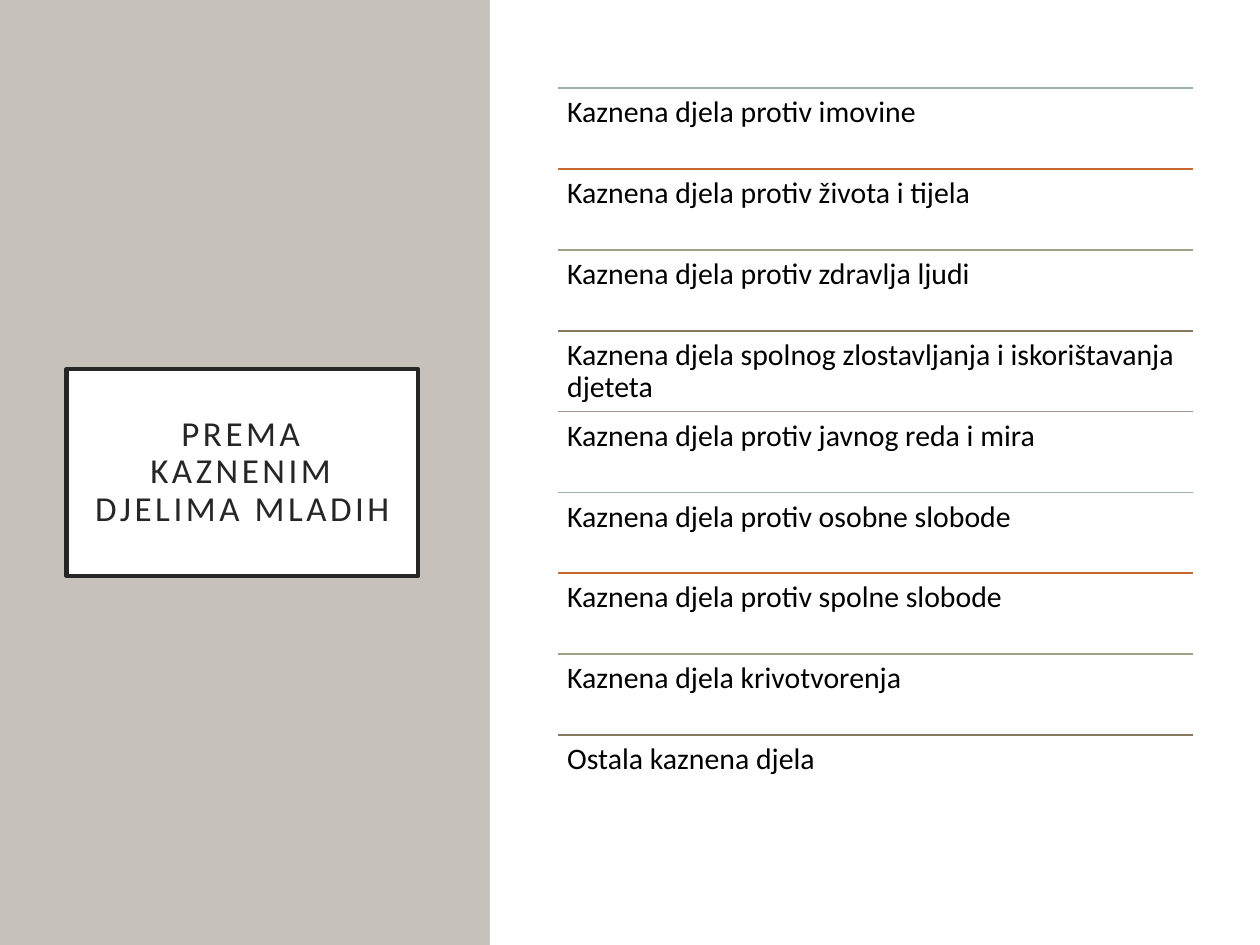
from itertools import cycle

from lxml import etree
from pptx import Presentation
from pptx.dml.color import RGBColor
from pptx.enum.shapes import MSO_CONNECTOR, MSO_SHAPE
from pptx.enum.text import MSO_ANCHOR, PP_ALIGN
from pptx.oxml.ns import qn
from pptx.util import Pt

RECTANGLE = MSO_SHAPE.RECTANGLE
STRAIGHT = MSO_CONNECTOR.STRAIGHT
TOP, MIDDLE = MSO_ANCHOR.TOP, MSO_ANCHOR.MIDDLE
LEFT, CENTER = PP_ALIGN.LEFT, PP_ALIGN.CENTER

WHITE = RGBColor(0xFF, 0xFF, 0xFF)
BLACK = RGBColor(0x00, 0x00, 0x00)
CHARCOAL = RGBColor(0x26, 0x26, 0x26)
STONE = RGBColor(0xC6, 0xC1, 0xBA)
RULE_COLORS = (
    RGBColor(0x9B, 0xAF, 0xB5),
    RGBColor(0xC9, 0x67, 0x31),
    RGBColor(0x9C, 0xA3, 0x83),
    RGBColor(0x87, 0x79, 0x5D),
    RGBColor(0xA0, 0x98, 0x8C),
)

TITLE = "PREMA KAZNENIM DJELIMA MLADIH"
OFFENCES = (
    "Kaznena djela protiv imovine",
    "Kaznena djela protiv života i tijela",
    "Kaznena djela protiv zdravlja ljudi",
    "Kaznena djela spolnog zlostavljanja i iskorištavanja djeteta",
    "Kaznena djela protiv javnog reda i mira",
    "Kaznena djela protiv osobne slobode",
    "Kaznena djela protiv spolne slobode",
    "Kaznena djela krivotvorenja",
    "Ostala kaznena djela",
)

SLIDE_WIDTH, SLIDE_HEIGHT = 720, 540
SIDEBAR_WIDTH = 280
LIST_LEFT, LIST_TOP, LIST_WIDTH = 319, 50.4, 363
ROW_HEIGHT = 46.2


class SlideBuilder:
    font_name = "Calibri"
    line_spacing = 0.9

    def __init__(self, slide):
        self.slide = slide

    def panel(self, left, top, width, height, fill, outline=None):
        shape = self.slide.shapes.add_shape(
            RECTANGLE, Pt(left), Pt(top), Pt(width), Pt(height))
        shape.shadow.inherit = False
        shape.fill.solid()
        shape.fill.fore_color.rgb = fill
        if outline is None:
            shape.line.fill.background()
        else:
            shape.line.color.rgb = outline
            shape.line.width = Pt(2.5)
        return shape

    def rule(self, left, top, width, color):
        line = self.slide.shapes.add_connector(
            STRAIGHT, Pt(left), Pt(top), Pt(left + width), Pt(top))
        line.line.color.rgb = color
        line.line.width = Pt(1)
        etree.SubElement(line._element.spPr, qn("a:effectLst"))

    def text(self, shape, text, size, color, inset, anchor, align, tracking=0):
        frame = shape.text_frame
        frame.word_wrap = True
        frame.vertical_anchor = anchor
        frame.margin_left = frame.margin_right = Pt(inset)
        frame.margin_top = frame.margin_bottom = Pt(inset)
        para = frame.paragraphs[0]
        para.alignment = align
        para.line_spacing = self.line_spacing
        span = para.add_run()
        span.text = text
        span.font.name = self.font_name
        span.font.size = Pt(size)
        span.font.color.rgb = color
        if tracking:
            span.font._element.set("spc", str(tracking * 100))

    def title(self, left, top, width, height, text):
        box = self.panel(left, top, width, height, WHITE, CHARCOAL)
        self.text(box, text, 20, CHARCOAL, 14.4, MIDDLE, CENTER, tracking=2)

    def list_row(self, left, top, width, height, text, color):
        self.rule(left, top, width, color)
        box = self.slide.shapes.add_textbox(
            Pt(left), Pt(top), Pt(width), Pt(height))
        self.text(box, text, 17, BLACK, 5.1, TOP, LEFT)


def main():
    deck = Presentation()
    deck.slide_width, deck.slide_height = Pt(SLIDE_WIDTH), Pt(SLIDE_HEIGHT)
    page = SlideBuilder(deck.slides.add_slide(deck.slide_layouts[6]))

    page.panel(0, 0, SIDEBAR_WIDTH, SLIDE_HEIGHT, STONE)
    page.title(38, 211, 201, 118, TITLE)
    page.panel(SIDEBAR_WIDTH, 0, SLIDE_WIDTH - SIDEBAR_WIDTH, SLIDE_HEIGHT, WHITE)
    for row, (offence, color) in enumerate(zip(OFFENCES, cycle(RULE_COLORS))):
        page.list_row(LIST_LEFT, LIST_TOP + row * ROW_HEIGHT,
                      LIST_WIDTH, ROW_HEIGHT, offence, color)

    deck.save("out.pptx")


if __name__ == "__main__":
    main()
